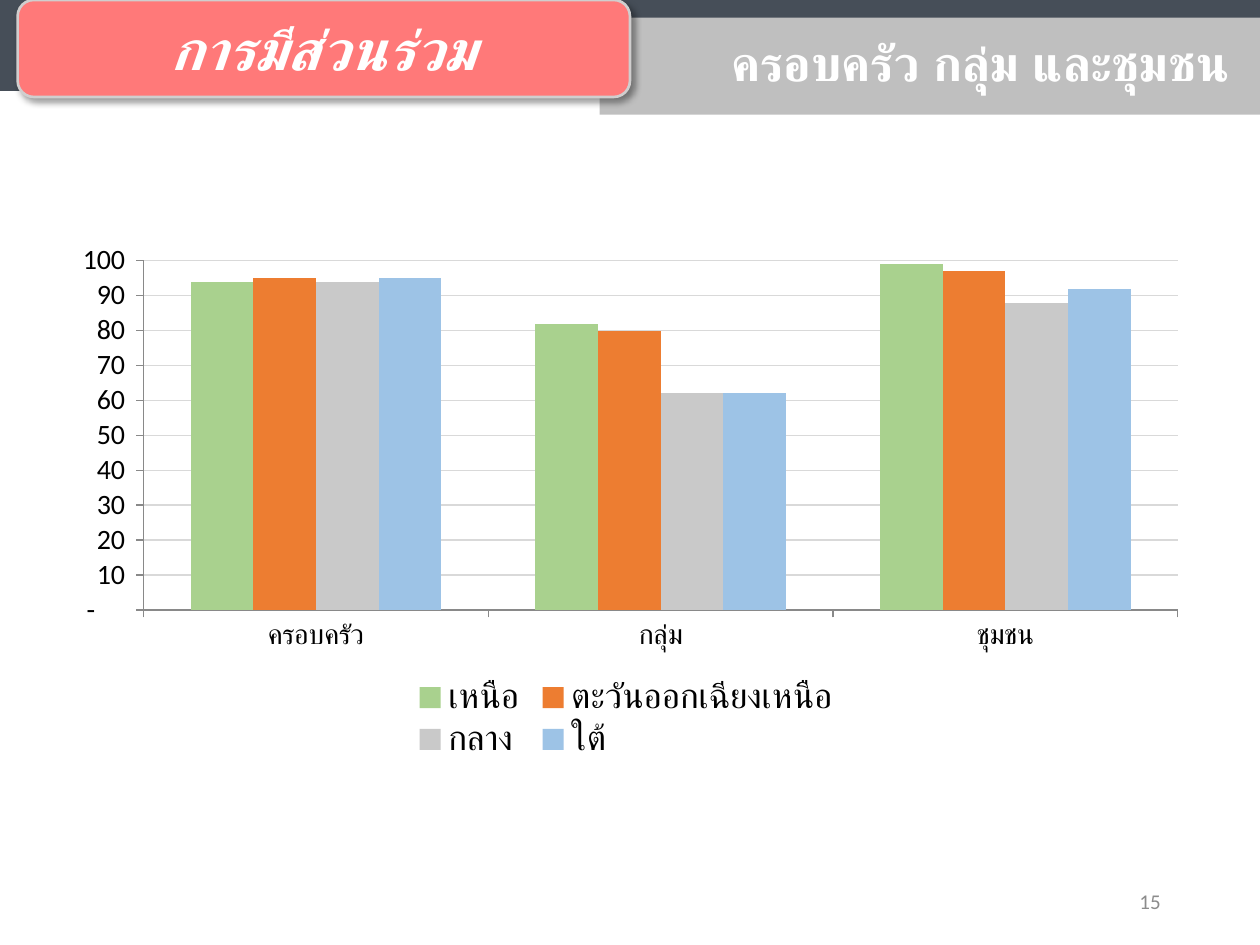
from lxml.etree import SubElement
from pptx import Presentation
from pptx.chart.data import CategoryChartData
from pptx.dml.color import RGBColor
from pptx.enum.chart import XL_CHART_TYPE, XL_LEGEND_POSITION, XL_TICK_MARK
from pptx.enum.shapes import MSO_SHAPE
from pptx.enum.text import MSO_ANCHOR, PP_ALIGN
from pptx.oxml import parse_xml
from pptx.oxml.ns import nsdecls, qn
from pptx.util import Inches, Pt

FONT = "Calibri"
WHITE = RGBColor(0xFF, 0xFF, 0xFF)
BLACK = RGBColor(0, 0, 0)
SLATE = RGBColor(0x46, 0x4E, 0x58)
SILVER = RGBColor(0xBF, 0xBF, 0xBF)
CORAL = RGBColor(0xFF, 0x79, 0x79)
CORAL_EDGE = RGBColor(0xD0, 0xCE, 0xCE)
NUMBER_GREY = RGBColor(0x8C, 0x8C, 0x8C)
AXIS_GREY = RGBColor(0x89, 0x89, 0x89)
GRID_GREY = RGBColor(0xD9, 0xD9, 0xD9)

REGIONS = [
    ("เหนือ", (94, 82, 99), RGBColor(0xA9, 0xD1, 0x8E)),
    ("ตะวันออกเฉียงเหนือ", (95, 80, 97), RGBColor(0xED, 0x7D, 0x31)),
    ("กลาง", (94, 62, 88), RGBColor(0xC9, 0xC9, 0xC9)),
    ("ใต้", (95, 62, 92), RGBColor(0x9D, 0xC3, 0xE6)),
]


def write(holder, text, size, color=WHITE, align=PP_ALIGN.RIGHT, bold=False, italic=False):
    frame = holder.text_frame
    frame.text = text
    frame.word_wrap = True
    frame.vertical_anchor = MSO_ANCHOR.MIDDLE
    paragraph = frame.paragraphs[0]
    paragraph.alignment = align
    font = paragraph.runs[0].font
    font.name, font.size = FONT, Pt(size)
    font.bold, font.italic = bold, italic
    font.color.rgb = color


def place_in_chart(part, x, y, w, h, inner=False):
    """Fix a chart part's place, given as shares of the chart's size."""
    for old in part.findall(qn("c:layout")):
        part.remove(old)
    layout = parse_xml(f"<c:layout {nsdecls('c')}><c:manualLayout/></c:layout>")
    manual = layout[0]
    if inner:
        SubElement(manual, qn("c:layoutTarget")).set("val", "inner")
    settings = [("xMode", "edge"), ("yMode", "edge"), ("x", x), ("y", y), ("w", w), ("h", h)]
    for tag, value in settings:
        SubElement(manual, qn(f"c:{tag}")).set("val", str(value))
    part.insert(0 if inner else 1, layout)


deck = Presentation()
deck.slide_width, deck.slide_height = Inches(10), Inches(7.5)
slide = deck.slides.add_slide(deck.slide_layouts[5])
shapes = slide.shapes

# Header: two bands, with the topic tab on top
BAND_HEIGHT = 0.77
bands = []
for preset, left, top, width, fill in [
    (MSO_SHAPE.FLOWCHART_PROCESS, 0, -0.05, 10, SLATE),
    (MSO_SHAPE.RECTANGLE, 4.76, 0.14, 5.24, SILVER),
    (MSO_SHAPE.FLOWCHART_ALTERNATE_PROCESS, 0.14, 0, 4.86, CORAL),
]:
    band = shapes.add_shape(preset, Inches(left), Inches(top), Inches(width), Inches(BAND_HEIGHT))
    band.shadow.inherit = False
    band.fill.solid()
    band.fill.fore_color.rgb = fill
    band.line.fill.background()
    bands.append(band)

topic = bands[-1]
topic.line.color.rgb = CORAL_EDGE
topic.line.width = Pt(1.5)
SubElement(topic.element.spPr.find(qn("a:effectLst")), qn("a:outerShdw"),
           blurRad=str(Pt(4)), dist=str(Pt(3)), dir=str(45 * 60000)).append(
    parse_xml(f'<a:srgbClr {nsdecls("a")} val="000000"><a:alpha val="40000"/></a:srgbClr>'))
write(topic, "การมีส่วนร่วม", 32, align=PP_ALIGN.CENTER, bold=True, italic=True)

title = shapes.title
title.left, title.top, title.width, title.height = map(Inches, (5.26, 0.21, 4.6, 0.57))
write(title, "ครอบครัว กลุ่ม และชุมชน", 28, bold=True)
shapes.element.append(title.element)  # bring in front of the bands

page_number = shapes.add_textbox(Inches(7.06), Inches(6.95), Inches(2.25), Inches(0.4))
write(page_number, "15", 12, color=NUMBER_GREY)

# Participation by region
data = CategoryChartData()
data.categories = ["ครอบครัว", "กลุ่ม", "ชุมชน"]
for region, shares, _ in REGIONS:
    data.add_series(region, shares)
chart = shapes.add_chart(XL_CHART_TYPE.COLUMN_CLUSTERED, Inches(0.41), Inches(1.86),
                         Inches(9.12), Inches(4.2), data).chart
chart.has_title = False
chart.font.name, chart.font.size = FONT, Pt(10)
chart.font.color.rgb = BLACK

plot = chart.plots[0]
plot.gap_width, plot.overlap = 150, 0
plot.vary_by_categories = False
for series, (_, _, color) in zip(plot.series, REGIONS):
    series.format.fill.solid()
    series.format.fill.fore_color.rgb = color

for axis in (chart.category_axis, chart.value_axis):
    axis.major_tick_mark = XL_TICK_MARK.OUTSIDE
    axis.minor_tick_mark = XL_TICK_MARK.NONE
    axis.tick_labels.font.name = FONT
    axis.tick_labels.font.size = Pt(16)
    axis.format.line.color.rgb = AXIS_GREY
    axis.format.line.width = Pt(0.75)

values = chart.value_axis
values.minimum_scale, values.maximum_scale, values.major_unit = 0, 100, 10
values.tick_labels.number_format = r'_-* #,##0_-;\-* #,##0_-;_-* "-"??_-;_-@_'
values.tick_labels.number_format_is_linked = False
values.major_gridlines.format.line.color.rgb = GRID_GREY
values.major_gridlines.format.line.width = Pt(0.75)

chart.has_legend = True
legend = chart.legend
legend.position = XL_LEGEND_POSITION.BOTTOM
legend.include_in_layout = False
legend.font.name, legend.font.size = FONT, Pt(20)

plot_area = chart.element.find(f".//{qn('c:plotArea')}")
legend_box = chart.element.find(f".//{qn('c:legend')}")
place_in_chart(plot_area, 0.08, 0.05, 0.9, 0.66, inner=True)
place_in_chart(legend_box, 0.31, 0.83, 0.38, 0.17)

deck.save("out.pptx")
